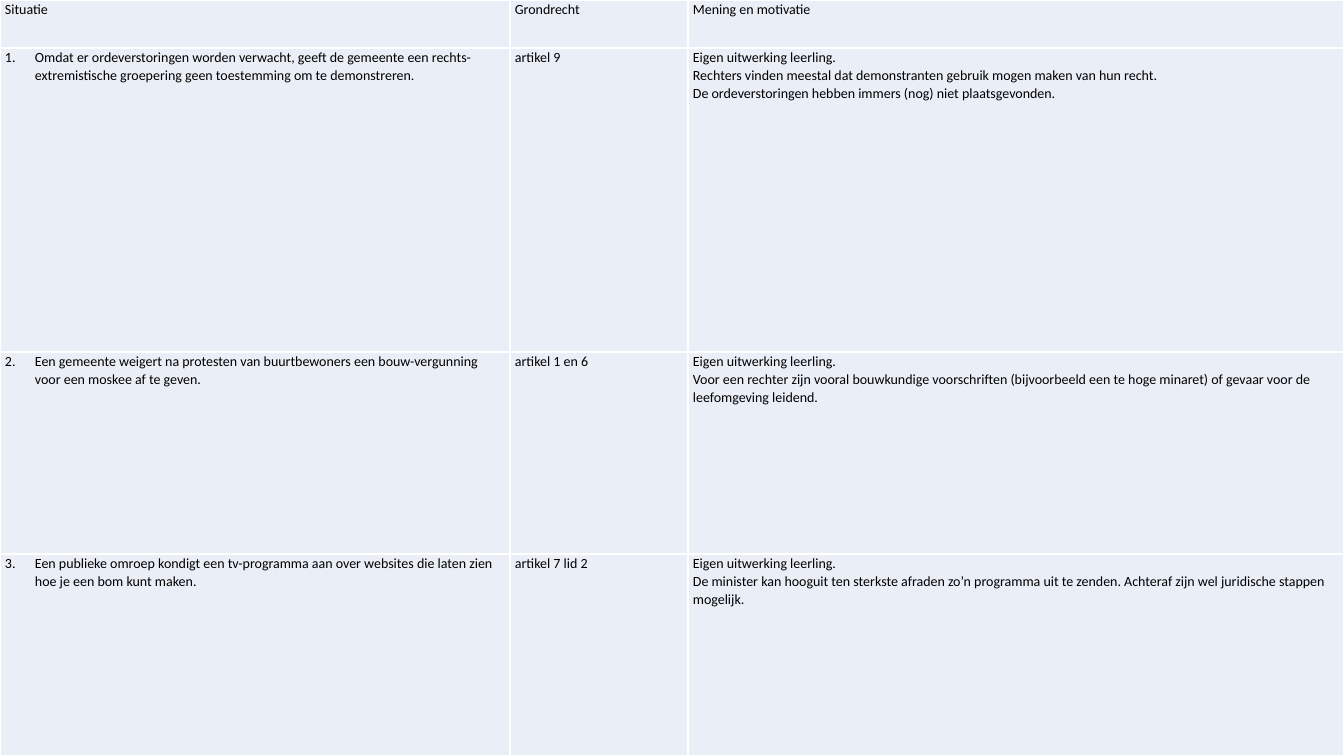
from dataclasses import dataclass

from lxml import etree
from pptx import Presentation
from pptx import util as u
from pptx.dml.color import RGBColor
from pptx.oxml.ns import qn
from pptx.table import _Cell as Cell

SCALE = 914400 / 100.8
COLS = [510, 178, 656]
ROWS = [48, 304, 202, 202]
HANG = 30
FILL, LINE, INK = "EAEFF7", "FFFFFF", "000000"
FONT = {"name": "Calibri", "size": u.Pt(10), "bold": False}


@dataclass
class Case:
    event: str
    right: str
    views: list[str]


OWN = "Eigen uitwerking leerling."
CASES = [
    Case("Situatie", "Grondrecht", ["Mening en motivatie"]),
    Case(
        "1.\tOmdat er ordeverstoringen worden verwacht, geeft de gemeente een "
        "rechts-extremistische groepering geen toestemming om te demonstreren.",
        "artikel 9",
        [OWN,
         "Rechters vinden meestal dat demonstranten gebruik mogen maken van hun recht.",
         "De ordeverstoringen hebben immers (nog) niet plaatsgevonden."],
    ),
    Case(
        "2.\tEen gemeente weigert na protesten van buurtbewoners een "
        "bouw-vergunning voor een moskee af te geven.",
        "artikel 1 en 6",
        [OWN,
         "Voor een rechter zijn vooral bouwkundige voorschriften (bijvoorbeeld een "
         "te hoge minaret) of gevaar voor de leefomgeving leidend."],
    ),
    Case(
        "3.\tEen publieke omroep kondigt een tv-programma aan over websites die "
        "laten zien hoe je een bom kunt maken.",
        "artikel 7 lid 2",
        [OWN,
         "De minister kan hooguit ten sterkste afraden zo’n programma uit te zenden. "
         "Achteraf zijn wel juridische stappen mogelijk."],
    ),
]


def emu(px: int) -> int:
    return round(px * SCALE)


def paint(color: str) -> RGBColor:
    return RGBColor.from_string(color)


def frame(cell: Cell) -> None:
    """Give the cell its margins, borders and fill."""
    margins = {"left": 5, "right": 5, "top": 0, "bottom": 0}
    for side, px in margins.items():
        setattr(cell, f"margin_{side}", emu(px))
    props = cell._tc.get_or_add_tcPr()
    for side in "LRTB":
        edge = etree.SubElement(props, qn(f"a:ln{side}"), w=str(u.Pt(1)))
        solid = etree.SubElement(edge, qn("a:solidFill"))
        etree.SubElement(solid, qn("a:srgbClr"), val=LINE)
    cell.fill.solid()
    cell.fill.fore_color.rgb = paint(FILL)


def write(cell: Cell, lines: list[str], hang: int = 0) -> None:
    cell.text_frame.text = "\n".join(lines)
    for para in cell.text_frame.paragraphs:
        if hang:
            props = para._p.get_or_add_pPr()
            props.set("marL", str(emu(hang)))
            props.set("indent", str(-emu(hang)))
        para.line_spacing = u.Pt(13)
        for run in para.runs:
            for key, value in FONT.items():
                setattr(run.font, key, value)
            run.font.color.rgb = paint(INK)


def main() -> None:
    deck = Presentation()
    deck.slide_width, deck.slide_height = emu(sum(COLS)), emu(sum(ROWS))
    slide = deck.slides.add_slide(deck.slide_layouts[6])
    table = slide.shapes.add_table(
        len(ROWS), len(COLS), 0, 0, deck.slide_width, deck.slide_height
    ).table
    for col, px in zip(table.columns, COLS):
        col.width = emu(px)
    for row, px, case in zip(table.rows, ROWS, CASES):
        row.height = emu(px)
        for cell in row.cells:
            frame(cell)
        event, right, views = row.cells
        write(event, [case.event], HANG)
        write(right, [case.right])
        write(views, case.views)
    deck.save("out.pptx")


if __name__ == "__main__":
    main()
